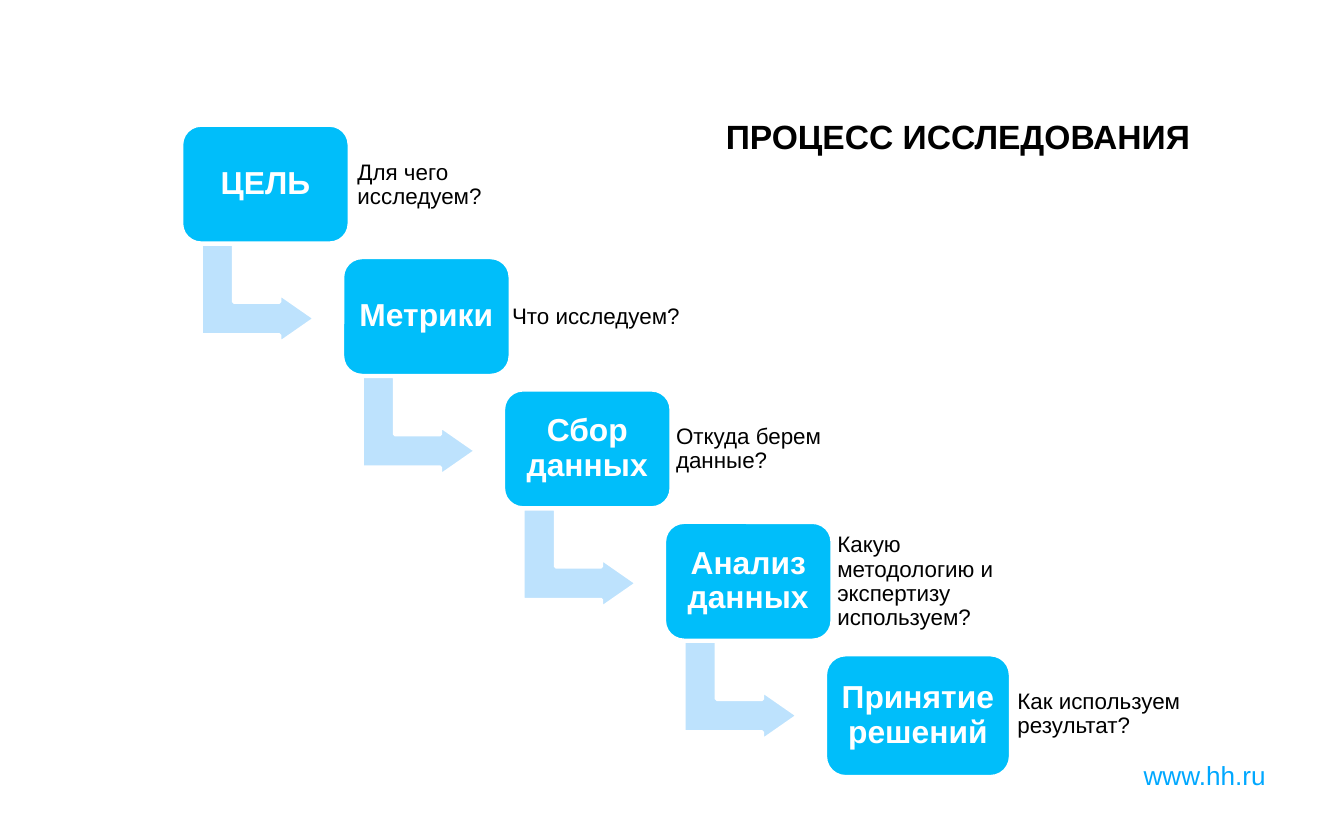
from pptx import Presentation
from pptx.dml.color import RGBColor
from pptx.enum.shapes import MSO_SHAPE
from pptx.enum.text import MSO_ANCHOR, MSO_AUTO_SIZE, PP_ALIGN
from pptx.util import Inches, Pt

BLACK = RGBColor(0x00, 0x00, 0x00)
WHITE = RGBColor(0xFF, 0xFF, 0xFF)
STEP_BLUE = RGBColor(0x00, 0xBE, 0xFA)
ARROW_BLUE = RGBColor(0xBD, 0xE2, 0xFD)
LINK_BLUE = RGBColor(0x00, 0xA8, 0xFF)

FIRST_LEFT, FIRST_TOP = 1.35, 0.93
LAST_LEFT, LAST_TOP = 6.14, 4.87
STEP_SIZE = (1.25, 0.88)
LAST_SIZE = (1.38, 0.91)
ARROW_OFFSET = (0.2, 0.83)
ARROW_SIZE = (0.74, 0.85)
NOTE_DROP = 0.09

STEPS = [
    ("ЦЕЛЬ", "Для чего исследуем?", 2.61),
    ("Метрики", "Что исследуем?", 3.76),
    ("Сбор данных", "Откуда берем данные?", 4.98),
    ("Анализ данных", "Какую методологию и экспертизу используем?", 6.18),
    ("Принятие решений", "Как используем результат?", 7.52),
]


def inches(*lengths):
    """Turn plain numbers into slide lengths."""
    return [Inches(length) for length in lengths]


def write(holder, wording, size, color, bold=False, align=PP_ALIGN.LEFT, spacing=1.0):
    """Set and format the single paragraph of a text holder."""
    frame = holder.text_frame
    frame.text = wording
    frame.vertical_anchor = MSO_ANCHOR.MIDDLE
    frame.word_wrap = True
    paragraph = frame.paragraphs[0]
    paragraph.alignment = align
    paragraph.line_spacing = spacing
    for run in paragraph.runs:
        run.font.name = "Arial"
        run.font.size = Pt(size)
        run.font.bold = bold
        run.font.color.rgb = color
    return frame


def set_margins(frame, margin):
    """Give a text frame the same margin on every side."""
    frame.margin_left = frame.margin_right = Inches(margin)
    frame.margin_top = frame.margin_bottom = Inches(margin)


def add_title(slide, wording):
    """Place the heading in the title placeholder."""
    title = slide.shapes.title
    title.left, title.top, title.width, title.height = inches(5.3, 0.81, 3.81, 0.4)
    write(title, wording, 18, BLACK, bold=True).auto_size = MSO_AUTO_SIZE.NONE


def add_address(slide, wording):
    """Add the web address in the lower right corner."""
    address = slide.shapes.add_textbox(*inches(8.41, 5.6, 1.12, 0.34))
    write(address, wording, 14, LINK_BLUE).word_wrap = False


def add_note(slide, wording, left, top):
    """Add the question beside a step."""
    note = slide.shapes.add_textbox(*inches(left, top, 1.45, 0.71))
    set_margins(write(note, wording, 12, BLACK, spacing=0.9), 0.05)


def add_block(slide, preset, place, size, color):
    """Add a filled preset shape with a white outline."""
    block = slide.shapes.add_shape(preset, *inches(*place, *size))
    block.shadow.inherit = False
    block.fill.solid()
    block.fill.fore_color.rgb = color
    block.line.color.rgb = WHITE
    block.line.width = Pt(2)
    return block


def add_step(slide, wording, place, size):
    """Add a named step of the process."""
    step = add_block(slide, MSO_SHAPE.ROUNDED_RECTANGLE, place, size, STEP_BLUE)
    frame = write(step, wording, 17, WHITE, True, PP_ALIGN.CENTER, 0.9)
    set_margins(frame, 0.05)


def add_turn(slide, left, top):
    """Add the bent arrow that leads to the next step."""
    place = (left + ARROW_OFFSET[0], top + ARROW_OFFSET[1])
    turn = add_block(slide, MSO_SHAPE.BENT_UP_ARROW, place, ARROW_SIZE, ARROW_BLUE)
    turn.rotation = 90
    for index, share in enumerate((0.33, 0.25, 0.36)):
        turn.adjustments[index] = share


def main():
    """Build the research process slide."""
    deck = Presentation()
    deck.slide_width, deck.slide_height = inches(10, 6.25)
    slide = deck.slides.add_slide(deck.slide_layouts[5])
    add_title(slide, "ПРОЦЕСС ИССЛЕДОВАНИЯ")
    add_address(slide, "www.hh.ru")

    last = len(STEPS) - 1
    across = (LAST_LEFT - FIRST_LEFT) / last
    down = (LAST_TOP - FIRST_TOP) / last
    for index, (name, question, note_left) in enumerate(STEPS):
        left = FIRST_LEFT + index * across
        top = FIRST_TOP + index * down
        add_note(slide, question, note_left, top + NOTE_DROP)
        if index < last:
            add_turn(slide, left, top)
        add_step(slide, name, (left, top), STEP_SIZE if index < last else LAST_SIZE)

    deck.save("out.pptx")


if __name__ == "__main__":
    main()
